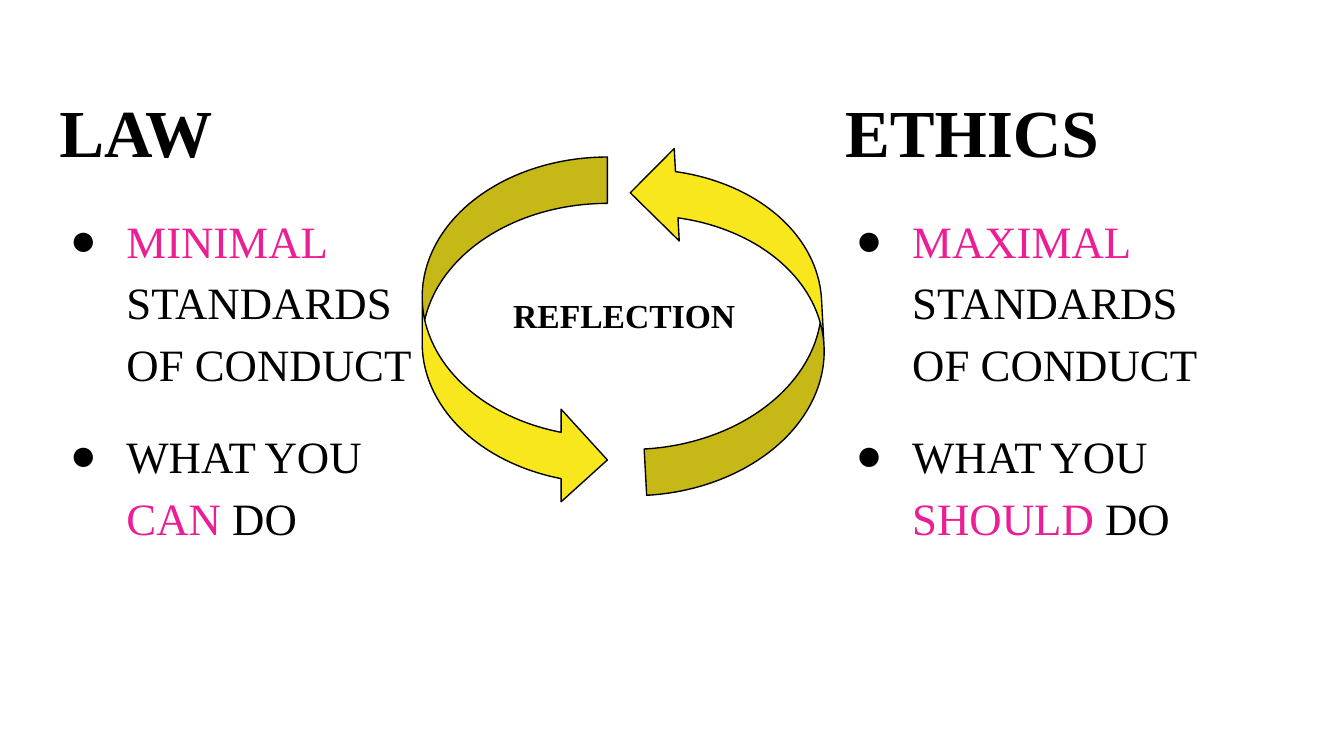
from lxml import etree
from pptx import Presentation
from pptx import util as u
from pptx.dml import color
from pptx.enum import shapes, text
from pptx.oxml import ns

INK, PINK, GOLD = "000000", "EB1E95", "F8E71C"
FONT = "Times New Roman"


def paint(code):
    return color.RGBColor.from_string(code)


class Page:
    def __init__(self, slide):
        self.slide = slide
        self.slots = {s.placeholder_format.idx: s for s in slide.placeholders}

    def drop(self, idx):
        node = self.slots[idx].element
        node.getparent().remove(node)

    def frame(self, shape, anchor):
        box = shape.text_frame
        box.word_wrap = True
        box.auto_size = text.MSO_AUTO_SIZE.NONE
        box.vertical_anchor = anchor
        box.margin_left = box.margin_right = u.Cm(0.25)
        box.margin_top = box.margin_bottom = u.Cm(0.25)
        return box

    def place(self, idx, left, top, width, height):
        shape = self.slots[idx]
        shape.left, shape.top = u.Cm(left), u.Cm(top)
        shape.width, shape.height = u.Cm(width), u.Cm(height)
        return shape

    def style(self, para, size, bold=False):
        para.alignment = text.PP_ALIGN.LEFT
        para.space_before = u.Pt(0)
        font = para.font
        font.name, font.size, font.bold = FONT, u.Pt(size), bold
        font.color.rgb = paint(INK)

    def title(self, idx, left, words):
        shape = self.place(idx, left, 1.37, 7.8, 2.11)
        para = self.frame(shape, text.MSO_ANCHOR.BOTTOM).paragraphs[0]
        para.text = words
        self.style(para, 36, True)

    def bullet(self, para):
        props = para._p.get_or_add_pPr()
        props.set("marL", str(u.Cm(1.27)))
        props.set("indent", str(u.Cm(-1.07)))
        tint = etree.SubElement(props, ns.qn("a:buClr"))
        etree.SubElement(tint, ns.qn("a:srgbClr"), val=INK)
        etree.SubElement(props, ns.qn("a:buFont"), typeface=FONT)
        etree.SubElement(props, ns.qn("a:buChar"), char="●")

    def points(self, idx, left, items):
        shape = self.place(idx, left, 3.63, 7.8, 8.84)
        box = self.frame(shape, text.MSO_ANCHOR.TOP)
        for i, item in enumerate(items):
            para = box.add_paragraph() if i else box.paragraphs[0]
            para.line_spacing, para.space_after = 1.15, u.Pt(16)
            self.bullet(para)
            self.style(para, 24)
            for words, tint in item:
                run = para.add_run()
                run.text = words
                run.font.color.rgb = paint(tint)

    def arrow(self, left, top, turn):
        shape = self.slide.shapes.add_shape(
            shapes.MSO_SHAPE.CURVED_RIGHT_ARROW,
            u.Cm(left), u.Cm(top), u.Cm(3.5), u.Cm(6.6))
        shape.rotation = turn
        shape.shadow.inherit = False
        shape.fill.solid()
        shape.fill.fore_color.rgb = paint(GOLD)
        shape.line.color.rgb = paint(INK)
        shape.line.width = u.Pt(0.75)

    def label(self, left, top, width, height, words):
        shape = self.slide.shapes.add_textbox(
            u.Cm(left), u.Cm(top), u.Cm(width), u.Cm(height))
        para = self.frame(shape, text.MSO_ANCHOR.TOP).paragraphs[0]
        para.text = words
        self.style(para, 18, True)


def main():
    deck = Presentation()
    deck.slide_width, deck.slide_height = u.Cm(25.4), u.Cm(14.29)
    page = Page(deck.slides.add_slide(deck.slide_layouts[4]))
    page.drop(1)

    sides = [
        (0, 2, 0.87, "LAW", "MINIMAL", "CAN"),
        (3, 4, 15.72, "ETHICS", "MAXIMAL", "SHOULD"),
    ]
    for head, body, left, name, level, verb in sides:
        page.title(head, left, name)
        page.points(body, left, [
            [(level, PINK), (" STANDARDS OF CONDUCT", INK)],
            [("WHAT YOU ", INK), (verb, PINK), (" DO", INK)],
        ])

    page.arrow(7.98, 2.97, 0)
    page.arrow(12.04, 2.67, 176.9)
    page.label(9.45, 5.33, 4.9, 1.88, "REFLECTION")
    deck.save("out.pptx")


if __name__ == "__main__":
    main()
